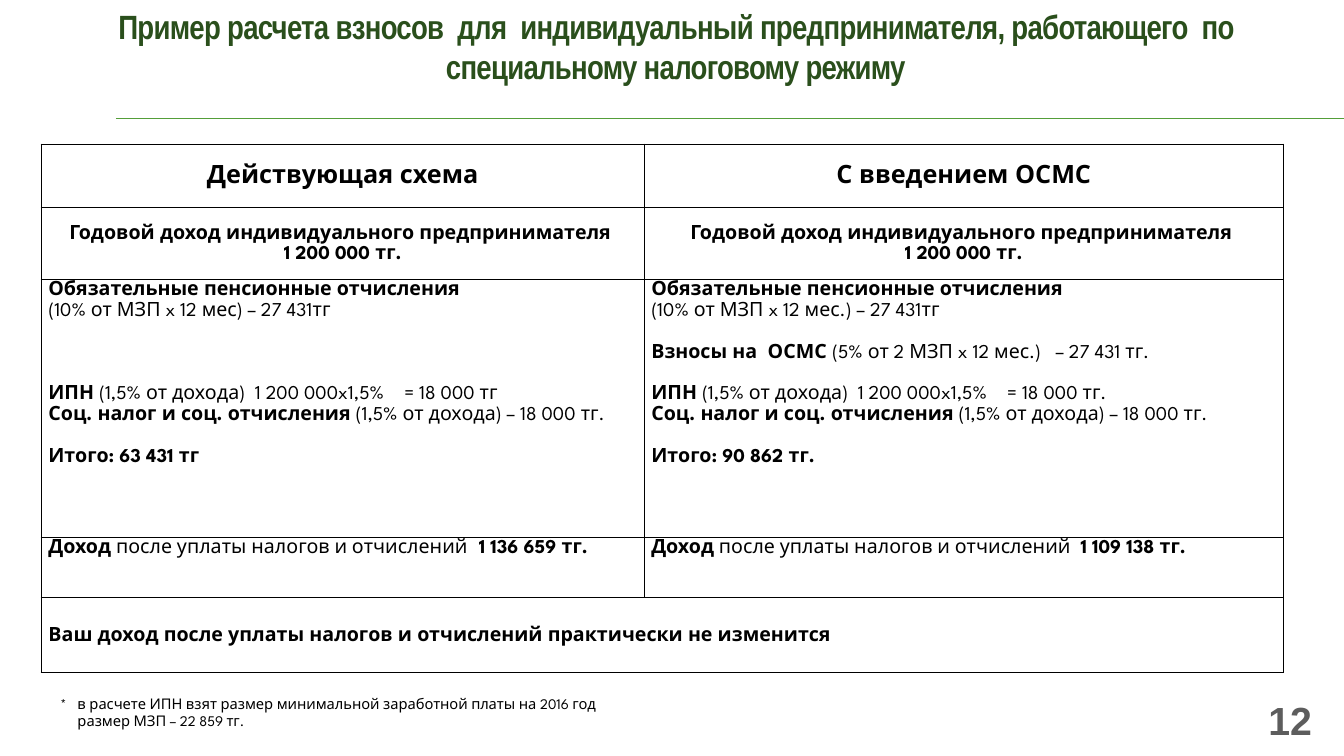
from dataclasses import dataclass
from typing import Any

import pptx
import pptx.dml.color
import pptx.enum.shapes
import pptx.enum.text
import pptx.oxml
import pptx.oxml.ns
import pptx.util

Inches = pptx.util.Inches
Pt = pptx.util.Pt
Align = pptx.enum.text.PP_ALIGN
Anchor = pptx.enum.text.MSO_ANCHOR

BLACK = pptx.dml.color.RGBColor(0x00, 0x00, 0x00)
WHITE = pptx.dml.color.RGBColor(0xFF, 0xFF, 0xFF)
TITLE_GREEN = pptx.dml.color.RGBColor(0x2A, 0x4F, 0x1C)
RULE_GREEN = pptx.dml.color.RGBColor(0x54, 0x9E, 0x39)
NUMBER_GREY = pptx.dml.color.RGBColor(0x5D, 0x5D, 0x5D)

BODY_FONT = "League Spartan"
BLANK_LINE = 14.9
TAB_STOPS = (3.53, 4.01, 4.27)
COLUMN_WIDTHS = (5.98, 6.34)
ROW_HEIGHTS = (0.63, 0.71, 2.56, 0.6, 0.74)


@dataclass(frozen=True)
class Span:
    text: str
    bold: bool = False


@dataclass(frozen=True)
class Para:
    spans: tuple[Span, ...]
    blank_lines_before: int = 0


@dataclass(frozen=True)
class Style:
    size: float
    name: str = BODY_FONT
    color: pptx.dml.color.RGBColor = BLACK
    align: Align = Align.LEFT
    line_spacing: float = 1.0
    tab_stops: tuple[float, ...] = ()


@dataclass(frozen=True)
class TextBox:
    left: float
    top: float
    width: float
    height: float
    anchor: Anchor
    style: Style
    paras: tuple[Para, ...]


@dataclass(frozen=True)
class Scheme:
    heading: str
    month: str
    health: tuple[Para, ...]
    tax_gap: int
    tax_unit: str
    total: str
    after_tax: str
    income: str


HEADING = Style(18, align=Align.CENTER, line_spacing=1.15)
SUBHEADING = Style(14, align=Align.CENTER, line_spacing=1.15)
BODY = Style(14, line_spacing=1.15, tab_stops=TAB_STOPS)
TITLE = Style(24, "Arial Narrow", TITLE_GREEN, Align.CENTER)
NOTE = Style(10.5, tab_stops=(0.17,))
NUMBER = Style(28, "Arial", NUMBER_GREY, Align.RIGHT)


def bold(text: str, gap: int = 0) -> Para:
    return Para((Span(text, True),), gap)


def plain(text: str) -> Para:
    return Para((Span(text),))


def labelled(label: str, text: str, gap: int = 0) -> Para:
    return Para((Span(label, True), Span(text)), gap)


SCHEMES = (
    Scheme("Действующая схема", "мес", (), 3, "тг", "63 431 тг",
           " после уплаты налогов и отчислений\t", "1 136 659 тг."),
    Scheme("С введением ОСМС", "мес.",
           (labelled("Взносы на  ОСМС ", "(5% от 2 МЗП x 12 мес.)\t– 27 431 тг.", 1),),
           1, "тг.", "90 862 тг.",
           " после уплаты налогов и отчислений  ", "1 109 138 тг."),
)
CONCLUSION = bold("Ваш доход после уплаты налогов и отчислений практически не изменится")

TITLE_BOX = TextBox(0.16, 0.06, 13.08, 0.8, Anchor.MIDDLE, TITLE, (
    bold("Пример расчета взносов  для  индивидуальный предпринимателя, "
         "работающего  по специальному налоговому режиму"),))
NOTE_BOX = TextBox(0.5, 6.84, 9.42, 0.45, Anchor.TOP, NOTE, (
    plain("*\tв расчете ИПН взят размер минимальной заработной платы на 2016 год"),
    plain("\tразмер МЗП – 22 859 тг.")))
NUMBER_BOX = TextBox(10.11, 6.94, 3, 0.4, Anchor.MIDDLE, NUMBER, (bold("12"),))


def apply(target: Any, values: dict[str, Any]) -> None:
    for name, value in values.items():
        setattr(target, name, value)


def write(frame: Any, paras: tuple[Para, ...], style: Style) -> None:
    for index, entry in enumerate(paras):
        para = frame.paragraphs[0] if index == 0 else frame.add_paragraph()
        apply(para, {"alignment": style.align, "line_spacing": style.line_spacing,
                     "space_before": Pt(entry.blank_lines_before * BLANK_LINE)})
        if style.tab_stops:
            stops = "".join(f'<a:tab pos="{Inches(stop)}" algn="l"/>'
                            for stop in style.tab_stops)
            namespace = pptx.oxml.ns.nsdecls("a")
            para._p.get_or_add_pPr().append(
                pptx.oxml.parse_xml(f"<a:tabLst {namespace}>{stops}</a:tabLst>"))
        for span in entry.spans:
            run = para.add_run()
            run.text = span.text
            apply(run.font, {"name": style.name, "size": Pt(style.size),
                             "bold": span.bold})
            run.font.color.rgb = style.color


def add_text(page: Any, item: TextBox) -> Any:
    box = page.shapes.add_textbox(*map(
        Inches, (item.left, item.top, item.width, item.height)))
    apply(box.text_frame, {"word_wrap": True, "vertical_anchor": item.anchor})
    write(box.text_frame, item.paras, item.style)
    return box


def fill_cell(cell: Any, paras: tuple[Para, ...], style: Style, anchor: Anchor) -> None:
    apply(cell, {"margin_left": Inches(0.07), "margin_right": Inches(0.07),
                 "margin_top": 0, "margin_bottom": 0, "vertical_anchor": anchor})
    write(cell.text_frame, paras, style)


def frame_cell(cell: Any) -> None:
    properties = cell._tc.get_or_add_tcPr()
    for side in ("lnL", "lnR", "lnT", "lnB"):
        properties.append(pptx.oxml.parse_xml(
            f'<a:{side} {pptx.oxml.ns.nsdecls("a")} w="{Pt(1)}"><a:solidFill>'
            f'<a:srgbClr val="{BLACK}"/></a:solidFill></a:{side}>'))
    cell.fill.solid()
    cell.fill.fore_color.rgb = WHITE


def scheme_rows(scheme: Scheme) -> tuple[tuple[tuple[Para, ...], Style, Anchor], ...]:
    calculation = (
        bold("Обязательные пенсионные отчисления"),
        plain(f"(10% от МЗП x 12 {scheme.month}) – 27 431тг"),
        *scheme.health,
        labelled("ИПН", " (1,5% от дохода)  1 200 000x1,5%\t"
                 f"= 18 000 {scheme.tax_unit}", scheme.tax_gap),
        labelled("Соц. налог и соц. отчисления", " (1,5% от дохода) – 18 000 тг."),
        bold(f"Итого: {scheme.total}", 1),
    )
    income = Para((Span("Доход", True), Span(scheme.after_tax), Span(scheme.income, True)))
    return (
        ((bold(scheme.heading),), HEADING, Anchor.MIDDLE),
        ((bold("Годовой доход индивидуального предпринимателя "),
          bold("1 200 000 тг.")), SUBHEADING, Anchor.MIDDLE),
        (calculation, BODY, Anchor.TOP),
        ((income,), BODY, Anchor.TOP),
    )


def add_comparison(page: Any) -> None:
    table = page.shapes.add_table(
        len(ROW_HEIGHTS), len(COLUMN_WIDTHS), Inches(0.41), Inches(1.43),
        Inches(sum(COLUMN_WIDTHS)), Inches(sum(ROW_HEIGHTS))).table
    apply(table, {"first_row": False, "horz_banding": False})
    for column, width in zip(table.columns, COLUMN_WIDTHS):
        column.width = Inches(width)
    for row, height in zip(table.rows, ROW_HEIGHTS):
        row.height = Inches(height)
    for cell in table.iter_cells():
        frame_cell(cell)
    for column, scheme in enumerate(SCHEMES):
        for row, content in enumerate(scheme_rows(scheme)):
            fill_cell(table.cell(row, column), *content)
    table.cell(4, 0).merge(table.cell(4, 1))
    fill_cell(table.cell(4, 0), (CONCLUSION,), BODY, Anchor.MIDDLE)


def add_rule(page: Any) -> None:
    rule = page.shapes.add_connector(
        pptx.enum.shapes.MSO_CONNECTOR.STRAIGHT,
        Inches(1.15), Inches(1.17), Inches(13.33), Inches(1.17))
    rule.line.color.rgb = RULE_GREEN
    rule.line.width = Pt(0.5)
    rule._element.spPr.append(pptx.oxml.parse_xml(
        f'<a:effectLst {pptx.oxml.ns.nsdecls("a")}/>'))


def main() -> None:
    deck = pptx.Presentation()
    apply(deck, {"slide_width": Inches(13.33), "slide_height": Inches(7.5)})
    page = deck.slides.add_slide(deck.slide_layouts[6])
    add_text(page, NOTE_BOX)
    title = add_text(page, TITLE_BOX)
    for run in title.text_frame.paragraphs[0].runs:
        run.font._element.set("spc", "-50")
    add_comparison(page)
    add_rule(page)
    add_text(page, NUMBER_BOX)
    deck.save("out.pptx")


if __name__ == "__main__":
    main()
